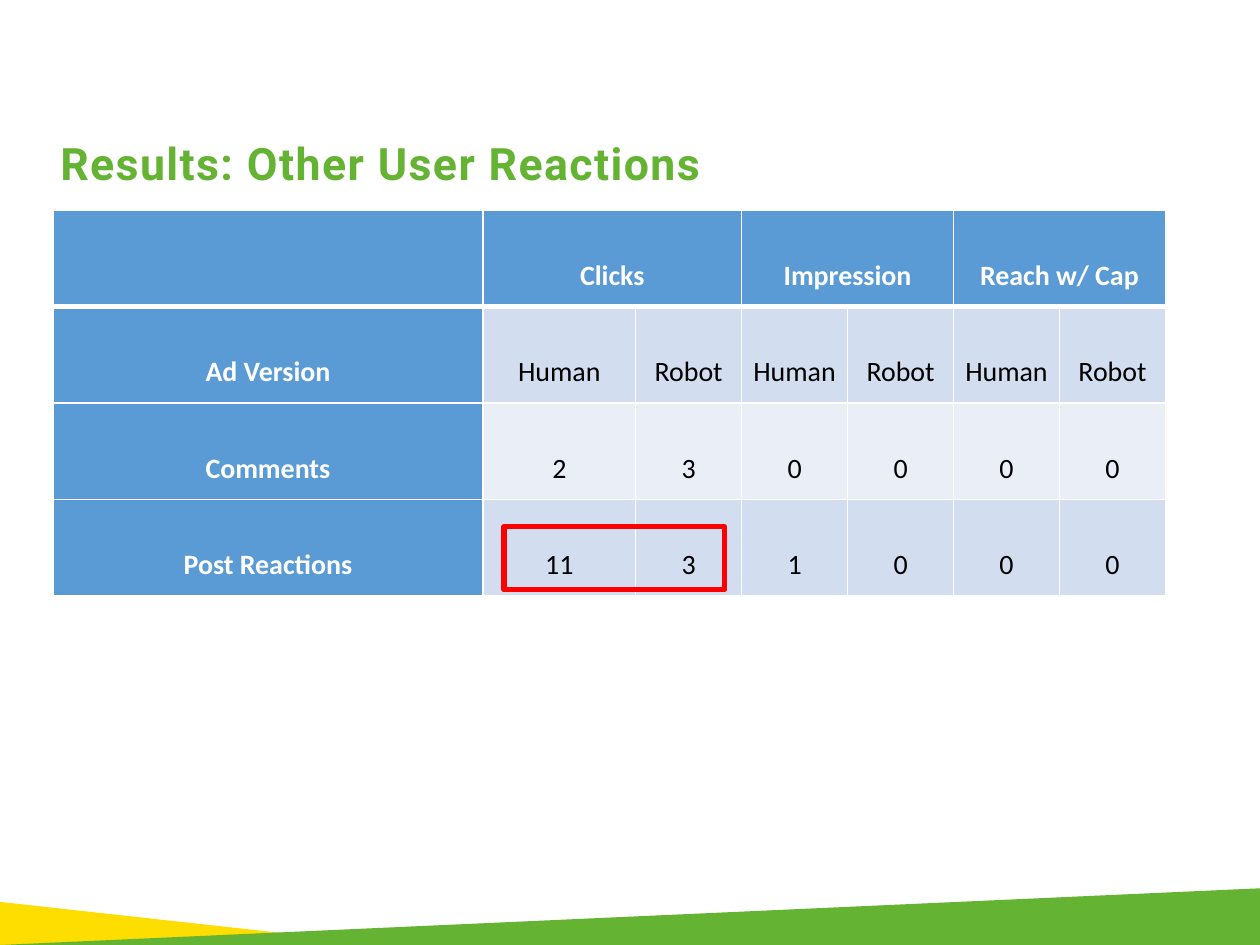
from dataclasses import dataclass
from lxml import etree
from pptx import Presentation
from pptx.dml.color import RGBColor
from pptx.enum.shapes import MSO_SHAPE
from pptx.enum.text import MSO_ANCHOR, PP_ALIGN
from pptx.oxml.ns import qn
from pptx.util import Inches, Pt

RECT = MSO_SHAPE.RECTANGLE
TOP, MIDDLE = MSO_ANCHOR.TOP, MSO_ANCHOR.MIDDLE
LEFT, CENTER = PP_ALIGN.LEFT, PP_ALIGN.CENTER
WIDE, HIGH = Inches(10), Inches(7.5)


@dataclass(frozen=True)
class Theme:
    green: str = "65B333"
    yellow: str = "FEDD00"
    blue: str = "5B9BD5"
    dark: str = "D2DEEF"
    light: str = "EAEFF7"
    white: str = "FFFFFF"
    black: str = "000000"
    red: str = "FF0000"
    head: float = 25.5
    body: float = 16
    thin: float = 1
    thick: float = 3


THEME = Theme()
COLS = (3.41, 1.21, 0.84, 0.84, 0.84, 0.84, 0.84)
GROUPS = ("Clicks", "Impression", "Reach w/ Cap")
ROWS = (
    ("Ad Version", *("Human", "Robot") * 3),
    ("Comments", "2", "3", "0", "0", "0", "0"),
    ("Post Reactions", "11", "3", "1", "0", "0", "0"),
)


def apply(item, values):
    for name, value in values.items():
        setattr(item, name, value)


def paint(fill, color):
    fill.solid()
    fill.fore_color.rgb = RGBColor.from_string(color)


def share(left, top, width, height):
    return [round(part * side) for part, side in
            zip((left, top, width, height), (WIDE, HIGH, WIDE, HIGH))]


def write(frame, text, font, color, para):
    line = frame.paragraphs[0]
    apply(line, para)
    run = line.add_run()
    run.text = text
    apply(run.font, font)
    run.font.color.rgb = RGBColor.from_string(color)
    return run


def add_title(slide, box):
    frame = slide.shapes.add_textbox(*box).text_frame
    apply(frame, {"word_wrap": True, "vertical_anchor": TOP})
    font = {"name": "Roboto", "size": Pt(THEME.head), "bold": True}
    run = write(frame, "Results: Other User Reactions", font, THEME.green,
                {"alignment": LEFT, "line_spacing": 0.9})
    run.font._element.set("spc", "80")


def add_edges(cell, base):
    props = cell._tc.get_or_add_tcPr()
    sides = {"lnL": THEME.thin, "lnR": THEME.thin, "lnT": THEME.thin, "lnB": base}
    for side, width in sides.items():
        edge = etree.SubElement(props, qn(f"a:{side}"), w=str(Pt(width)))
        fill = etree.SubElement(edge, qn("a:solidFill"))
        etree.SubElement(fill, qn("a:srgbClr"), val=THEME.white)


def add_grid(slide, box):
    data = [[""] * len(COLS), *ROWS]
    for index, name in enumerate(GROUPS):
        data[0][1 + 2 * index] = name
    table = slide.shapes.add_table(len(data), len(COLS), *box).table
    for col, part in zip(table.columns, COLS):
        col.width = round(box[2] * part / sum(COLS))
    for row in table.rows:
        row.height = round(box[3] / len(data))
    for start in range(1, len(COLS), 2):
        table.cell(0, start).merge(table.cell(0, start + 1))
    pad = Inches(0.07)
    form = {"vertical_anchor": MIDDLE, "margin_left": pad, "margin_right": pad,
            "margin_top": 0, "margin_bottom": 0}
    for y, row in enumerate(data):
        band = THEME.dark if y % 2 else THEME.light
        for x, text in enumerate(row):
            cell, lead = table.cell(y, x), y == 0 or x == 0
            add_edges(cell, THEME.thin if y else THEME.thick)
            paint(cell.fill, THEME.blue if lead else band)
            apply(cell, form)
            if text:
                font = {"name": "Calibri", "size": Pt(THEME.body), "bold": lead}
                write(cell.text_frame, text, font,
                      THEME.white if lead else THEME.black,
                      {"alignment": CENTER, "line_spacing": 2.0})


def add_mark(slide, box):
    mark = slide.shapes.add_shape(RECT, *box)
    mark.shadow.inherit = False
    mark.fill.background()
    paint(mark.line.fill, THEME.red)
    mark.line.width = Pt(THEME.thick)


def add_foot(slide, box):
    left, top, width, height = box
    wedges = (
        (THEME.yellow, ((0, 0.24), (0.31, 1), (0, 1))),
        (THEME.green, ((1, 0), (1, 1), (0, 1))),
    )
    for color, points in wedges:
        spots = [(left + round(x * width), top + round(y * height))
                 for x, y in points]
        path = slide.shapes.build_freeform(*spots[0])
        path.add_line_segments(spots[1:], close=True)
        wedge = path.convert_to_shape()
        wedge.shadow.inherit = False
        paint(wedge.fill, color)
        wedge.line.fill.background()


def main():
    deck = Presentation()
    apply(deck, {"slide_width": WIDE, "slide_height": HIGH})
    slide = deck.slides.add_slide(deck.slide_layouts[6])
    add_foot(slide, share(0, 0.94, 1, 0.06))
    add_title(slide, share(0.038, 0.144, 0.871, 0.08))
    add_grid(slide, share(0.042, 0.2227, 0.883, 0.408))
    add_mark(slide, share(0.4, 0.5573, 0.175, 0.0667))
    deck.save("out.pptx")


if __name__ == "__main__":
    main()
